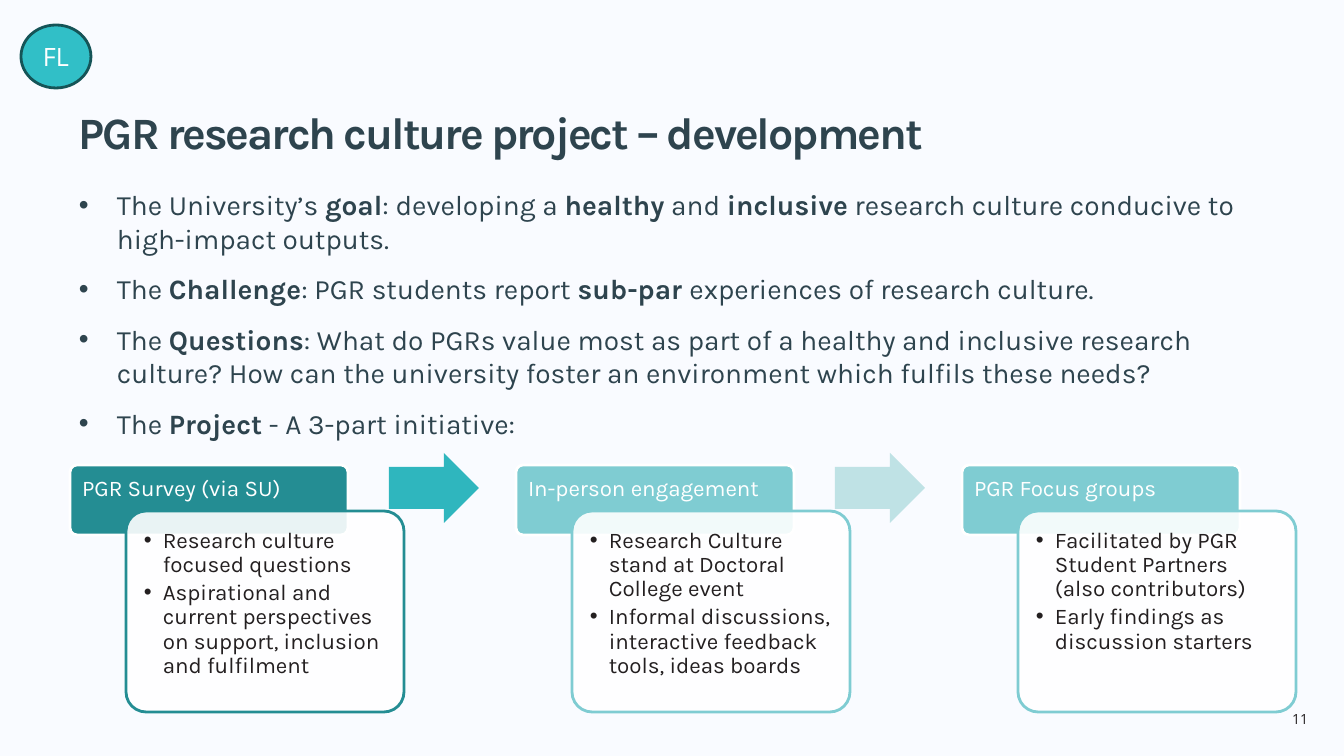
"""Build the slide on the development of the PGR research culture project."""
from dataclasses import dataclass

from lxml.etree import SubElement
from pptx import Presentation
from pptx.dml.color import RGBColor
from pptx.enum.shapes import MSO_SHAPE as Preset
from pptx.enum.text import MSO_ANCHOR as Anchor, PP_ALIGN as Align
from pptx.oxml.ns import qn
from pptx.util import Emu, Pt

TITLE = "PGR research culture project – development"
BADGE = "FL"
PAGE_NUMBER = "11"
POINTS = [
    ["The University’s ", "goal", ": developing a ", "healthy", " and ", "inclusive",
     " research culture conducive to high-impact outputs."],
    ["The ", "Challenge", ": PGR students report ", "sub-par ",
     "experiences of research culture."],
    ["The ", "Questions", ": What do PGRs value most as part of a healthy and inclusive "
     "research culture? How can the university foster an environment which fulfils these needs?"],
    ["The ", "Project", " - A 3-part initiative:"],
]
STAGES = [
    ("PGR Survey (via SU)", "248D93", "2FB6BE", [
        "Research culture focused questions",
        "Aspirational and current perspectives on support, inclusion and fulfilment"]),
    ("In-person engagement", "7FCCD2", "BFE2E5", [
        "Research Culture stand at Doctoral College event",
        "Informal discussions, interactive feedback tools, ideas boards"]),
    ("PGR Focus groups", "7FCCD2", None, [
        "Facilitated by PGR Student Partners (also contributors)",
        "Early findings as discussion starters"]),
]


@dataclass(frozen=True)
class Theme:
    """Hold the fonts, colours and type sizes."""
    main_font: str = "Karla"
    small_font: str = "Open Sans"
    background: str = "F9FBFF"
    heading: str = "2E444E"
    ink: str = "231F20"
    white: str = "FFFFFF"
    badge: str = "31BFC7"
    badge_line: str = "155457"
    title_size: int = 32
    body_size: int = 20
    badge_size: int = 18
    stage_size: int = 16
    number_size: int = 10


THEME = Theme()
SCALE = 914400 / 100.8
STAGE_LEFT, STAGE_TOP, STAGE_PITCH = 70, 465, 446
STAGE_WIDTH, HEADER_HEIGHT, CARD_HEIGHT = 278, 70, 201
CARD_SHIFT_X, CARD_SHIFT_Y = 56, 46
ARROW_SHIFT_X, ARROW_SHIFT_Y = 319, -12


def px(length):
    """Turn pixels into EMU."""
    return Emu(round(length * SCALE))


def add_span(para, text, size, color, font=THEME.main_font, bold=False):
    """Add one run to a paragraph."""
    span = para.add_run()
    span.text = text
    span.font.size = Pt(size)
    span.font.name = font
    span.font.bold = bold
    span.font.color.rgb = RGBColor.from_string(color)
    return span


def add_bullet(para, indent):
    """Give a paragraph a hanging bullet."""
    props = para._p.get_or_add_pPr()
    props.set("marL", str(px(indent)))
    props.set("indent", str(-px(indent)))
    SubElement(props, qn("a:buFont")).set("typeface", "Arial")
    SubElement(props, qn("a:buChar")).set("char", "•")


def add_paragraphs(frame, count):
    """Return the first paragraph of a frame and as many new ones as needed."""
    return [frame.paragraphs[0]] + [frame.add_paragraph() for _ in range(count - 1)]


def add_box(page, left, top, width, height):
    """Add a wrapping text box and return its frame."""
    frame = page.shapes.add_textbox(px(left), px(top), px(width), px(height)).text_frame
    frame.word_wrap = True
    return frame


def add_figure(page, preset, bounds, fill, line=None, adjust=(), alpha=None):
    """Add a flat preset shape."""
    shape = page.shapes.add_shape(preset, *map(px, bounds))
    shape.shadow.inherit = False
    for index, value in enumerate(adjust):
        shape.adjustments[index] = value
    shape.fill.solid()
    shape.fill.fore_color.rgb = RGBColor.from_string(fill)
    if alpha:
        color = shape._element.spPr.find(qn("a:solidFill")).find(qn("a:srgbClr"))
        SubElement(color, qn("a:alpha")).set("val", str(alpha * 1000))
    if line:
        shape.line.color.rgb = RGBColor.from_string(line)
        shape.line.width = Pt(2)
    else:
        shape.line.fill.background()
    return shape


def prepare_stage_text(shape, inset, count):
    """Set up the text of a stage shape and return its paragraphs."""
    frame = shape.text_frame
    frame.word_wrap = True
    frame.vertical_anchor = Anchor.TOP
    frame.margin_left = frame.margin_top = frame.margin_right = frame.margin_bottom = px(inset)
    paras = add_paragraphs(frame, count)
    for para in paras:
        para.alignment = Align.LEFT
        para.line_spacing = 0.9
    return paras


def add_stage(page, left, stage):
    """Add the header, card and arrow of one project stage."""
    name, color, arrow_color, items = stage
    header = add_figure(page, Preset.ROUNDED_RECTANGLE,
                        (left, STAGE_TOP, STAGE_WIDTH, HEADER_HEIGHT),
                        color, THEME.white, [0.1])
    add_span(prepare_stage_text(header, 10, 1)[0], name, THEME.stage_size, THEME.white)
    card = add_figure(page, Preset.ROUNDED_RECTANGLE,
                      (left + CARD_SHIFT_X, STAGE_TOP + CARD_SHIFT_Y, STAGE_WIDTH, CARD_HEIGHT),
                      THEME.white, color, [0.1], alpha=90)
    for para, item in zip(prepare_stage_text(card, 12, len(items)), items):
        add_bullet(para, 19)
        para.space_after = Pt(3)
        add_span(para, item, THEME.stage_size, THEME.ink)
    if arrow_color:
        add_figure(page, Preset.RIGHT_ARROW,
                   (left + ARROW_SHIFT_X, STAGE_TOP + ARROW_SHIFT_Y, 90, 70),
                   arrow_color, adjust=[0.6, 0.5])


def main():
    """Build and save the deck."""
    deck = Presentation()
    deck.slide_width, deck.slide_height = px(1344), px(756)
    page = deck.slides.add_slide(deck.slide_layouts[6])
    page.background.fill.solid()
    page.background.fill.fore_color.rgb = RGBColor.from_string(THEME.background)

    number = add_box(page, 1212, 706, 106, 27).paragraphs[0]
    number.alignment = Align.RIGHT
    add_span(number, PAGE_NUMBER, THEME.number_size, THEME.ink, THEME.small_font)

    title = add_box(page, 69, 60, 1195, 103)
    title.vertical_anchor = Anchor.BOTTOM
    span = add_span(title.paragraphs[0], TITLE, THEME.title_size, THEME.heading, bold=True)
    span.font._element.set("spc", "-150")

    body = add_box(page, 69, 183, 1229, 484)
    for para, parts in zip(add_paragraphs(body, len(POINTS)), POINTS):
        add_bullet(para, 38)
        para.space_after = Pt(12)
        for index, text in enumerate(parts):
            add_span(para, text, THEME.body_size, THEME.heading, bold=index % 2 == 1)

    badge = add_figure(page, Preset.OVAL, (21, 25, 70, 63), THEME.badge, THEME.badge_line)
    badge.text_frame.vertical_anchor = Anchor.MIDDLE
    para = badge.text_frame.paragraphs[0]
    para.alignment = Align.CENTER
    add_span(para, BADGE, THEME.badge_size, THEME.white, THEME.small_font)

    for index, stage in enumerate(STAGES):
        add_stage(page, STAGE_LEFT + index * STAGE_PITCH, stage)
    deck.save("out.pptx")


if __name__ == "__main__":
    main()
